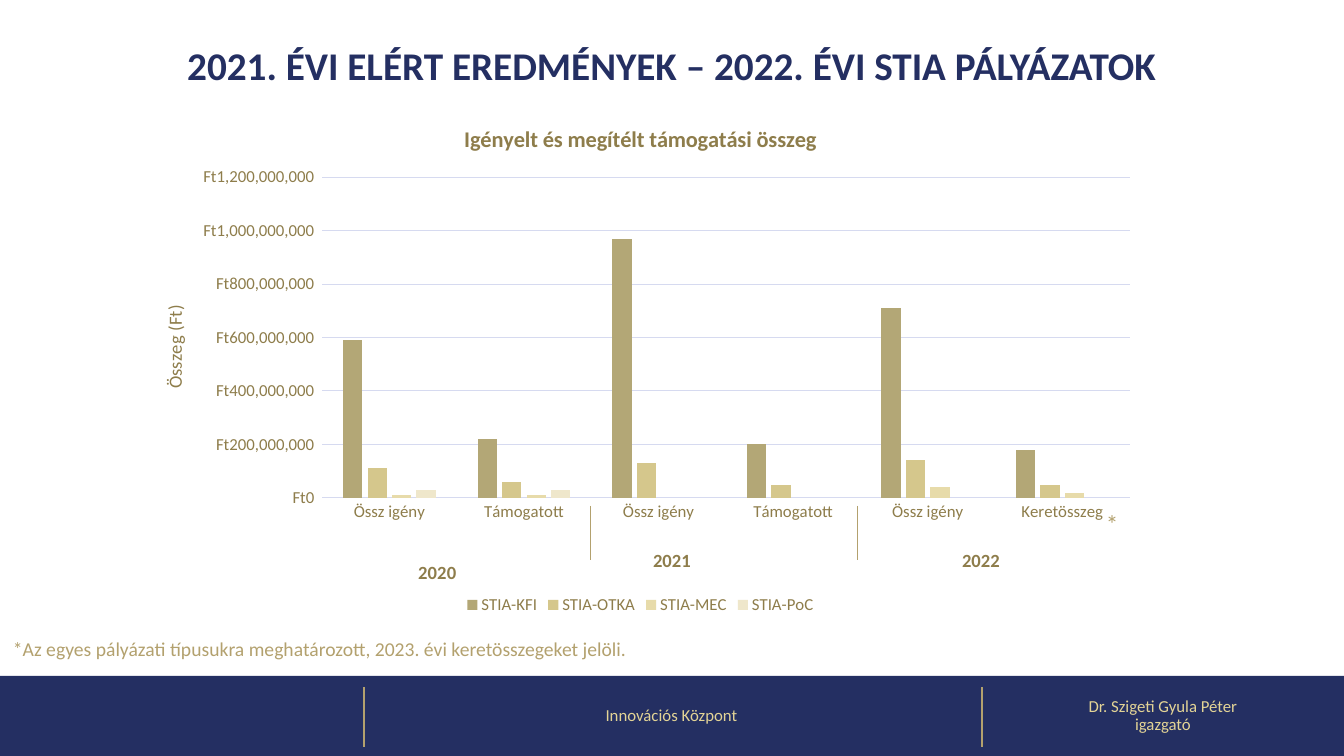
"""Slide comparing requested and awarded STIA grant amounts for 2020-2022."""
from lxml import etree
from pptx import Presentation
from pptx import util as u
from pptx.chart.data import CategoryChartData
from pptx.dml.color import RGBColor
from pptx.enum import chart as ch, shapes, text
from pptx.oxml.ns import qn

PX = 914400 / 100.8
COLORS = {"navy": "242F62", "gold": "B3A16E", "cream": "E3D496",
          "brown": "8E7D4B", "grid": "D6DAF0"}
CENTER, LEFT = text.PP_ALIGN.CENTER, text.PP_ALIGN.LEFT
TOP, MIDDLE = text.MSO_ANCHOR.TOP, text.MSO_ANCHOR.MIDDLE
CHART_BOX = (132, 104, 1017, 515)

deck = Presentation()
deck.slide_width, deck.slide_height = (u.Emu(round(n * PX)) for n in (1344, 756))
slide = deck.slides.add_slide(deck.slide_layouts[6])


def style(font, size, color, bold=False):
    font.name, font.size, font.bold = "Calibri", u.Pt(size), bold
    font.color.rgb = RGBColor.from_string(COLORS[color])


def place(element, left, top, width=None, height=None):
    layout = element.find(qn("c:layout"))
    if layout is None:
        layout = etree.Element(qn("c:layout"))
        element.insert(0, layout)
    manual = etree.SubElement(layout, qn("c:manualLayout"))
    values = {"xMode": "edge", "yMode": "edge",
              "x": round((left - CHART_BOX[0]) / CHART_BOX[2], 3),
              "y": round((top - CHART_BOX[1]) / CHART_BOX[3], 3)}
    if width:
        values = {"layoutTarget": "inner", **values,
                  "w": round(width / CHART_BOX[2], 3),
                  "h": round(height / CHART_BOX[3], 3)}
    for tag, value in values.items():
        etree.SubElement(manual, qn("c:" + tag)).set("val", str(value))


footer = slide.shapes.add_shape(shapes.MSO_SHAPE.RECTANGLE,
                                *(round(n * PX) for n in (0, 676, 1344, 80)))
footer.shadow.inherit = False
footer.fill.solid()
footer.fill.fore_color.rgb = RGBColor.from_string(COLORS["navy"])
footer.line.fill.background()

amounts = CategoryChartData(number_format='"Ft"#,##0_);[Red]\\("Ft"#,##0\\)')
amounts.categories = ["Össz igény", "Támogatott"] * 2 + ["Össz igény", "Keretösszeg"]
grants = [
    ("STIA-KFI", "B3A776", (590, 220, 970, 200, 710, 180)),
    ("STIA-OTKA", "D5C78C", (110, 60, 130, 50, 140, 50)),
    ("STIA-MEC", "E7DBAA", (10, 10, None, None, 40, 20)),
    ("STIA-PoC", "EFE7CB", (30, 30, None, None, None, None)),
]
for name, _, millions in grants:
    amounts.add_series(name, [m and m * 1_000_000 for m in millions])
chart = slide.shapes.add_chart(ch.XL_CHART_TYPE.COLUMN_CLUSTERED,
                               *(round(n * PX) for n in CHART_BOX), amounts).chart
style(chart.font, 12, "brown")
chart.has_title = True
chart.has_legend = True
chart.legend.position = ch.XL_LEGEND_POSITION.BOTTOM
chart.legend.include_in_layout = False
style(chart.legend.font, 12, "brown")
place(chart.plots[0]._element.getparent(), 322, 177, 807, 321)

bars = chart.plots[0]
bars.vary_by_categories = False
bars.gap_width, bars.overlap = 219, -27
for series, (_, color, _) in zip(bars.series, grants):
    series.format.fill.solid()
    series.format.fill.fore_color.rgb = RGBColor.from_string(color)

years, forints = chart.category_axis, chart.value_axis
for title, words, size, bold in [
    (chart.chart_title, "Igényelt és megítélt támogatási összeg", 16, True),
    (years.axis_title, "2020", 13.3, True),
    (forints.axis_title, "Összeg (Ft)", 13.3, False),
]:
    title.text_frame.text = words
    style(title.text_frame.paragraphs[0].font, size, "brown", bold)
place(years.axis_title._element, 415, 556)
place(forints.axis_title._element, 158, 302)
for axis in (years, forints):
    axis.major_tick_mark = axis.minor_tick_mark = ch.XL_TICK_MARK.NONE
    style(axis.tick_labels.font, 12, "brown")
forints.minimum_scale, forints.maximum_scale = 0, 1_200_000_000
forints.major_unit = 200_000_000
forints.format.line.fill.background()
for rule in (years.format.line, forints.major_gridlines.format.line):
    rule.color.rgb = RGBColor.from_string(COLORS["grid"])
    rule.width = u.Pt(0.75)

for x, top, bottom, weight in [(364, 687, 747, 1.5), (982, 687, 747, 1.5),
                               (590, 506, 560, 0.5), (857, 506, 560, 0.5)]:
    divider = slide.shapes.add_connector(shapes.MSO_CONNECTOR.STRAIGHT,
                                         *(round(n * PX) for n in (x, top, x, bottom)))
    divider.line.color.rgb = RGBColor.from_string(COLORS["gold"])
    divider.line.width = u.Pt(weight)
    etree.SubElement(divider._element.spPr, qn("a:effectLst"))

for box, lines, size, color, bold, align, anchor, spacing in [
    ((132, 36, 1079, 57), ["2021. ÉVI ELÉRT EREDMÉNYEK – 2022. ÉVI STIA PÁLYÁZATOK"],
     28, "navy", True, CENTER, TOP, 1.0),
    ((622, 544, 100, 32), ["2021"], 13.3, "brown", True, CENTER, TOP, 1.0),
    ((931, 544, 100, 32), ["2022"], 13.3, "brown", True, CENTER, TOP, 1.0),
    ((1096, 503, 28, 40), ["*"], 18, "gold", False, LEFT, TOP, 1.0),
    ((3, 632, 1146, 34),
     ["*Az egyes pályázati típusukra meghatározott, 2023. évi keretösszegeket jelöli."],
     14, "gold", False, LEFT, TOP, 1.0),
    ((362, 676, 619, 80), ["Innovációs Központ"],
     12, "cream", False, CENTER, MIDDLE, 0.9),
    ((982, 676, 362, 80), ["Dr. Szigeti Gyula Péter", "igazgató"],
     12, "cream", False, CENTER, MIDDLE, 0.9),
]:
    frame = slide.shapes.add_textbox(*(round(n * PX) for n in box)).text_frame
    frame.word_wrap = True
    frame.vertical_anchor = anchor
    frame.text = "\n".join(lines)
    for paragraph in frame.paragraphs:
        paragraph.alignment, paragraph.line_spacing = align, spacing
        style(paragraph.font, size, color, bold)

deck.save("out.pptx")
